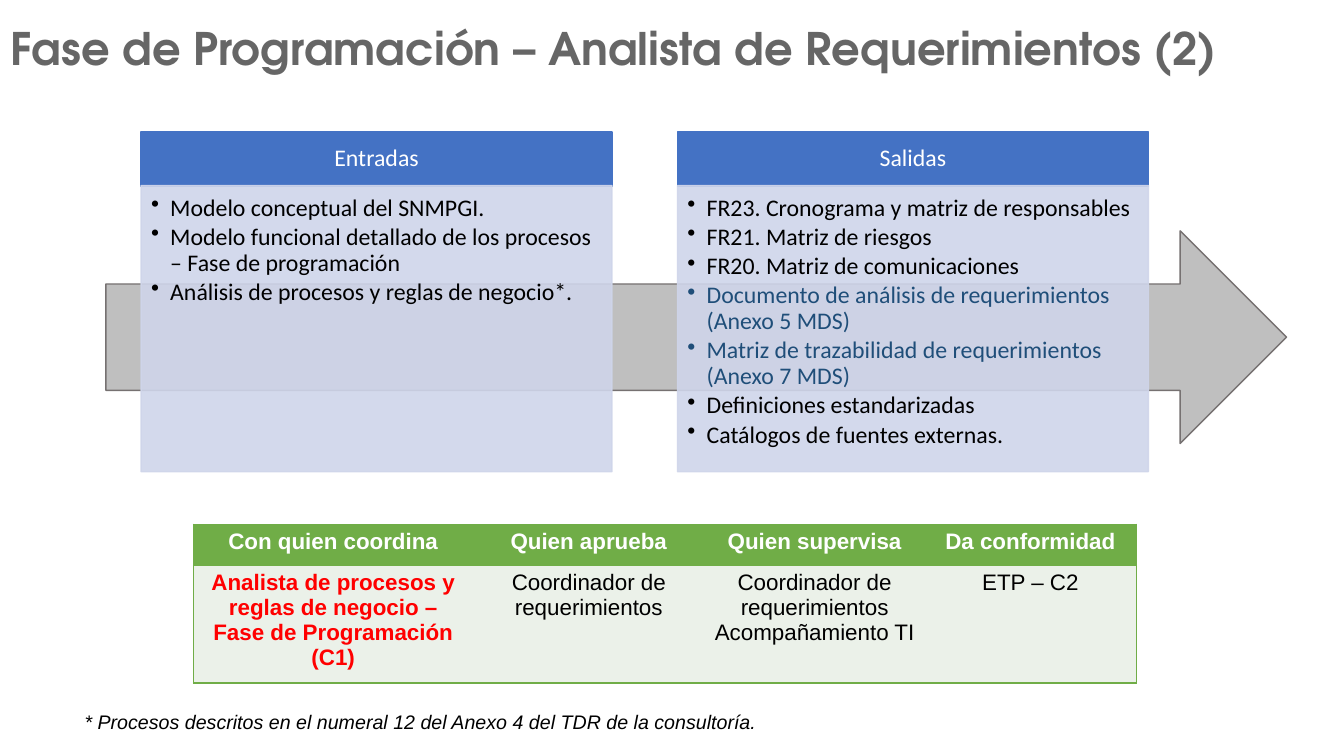
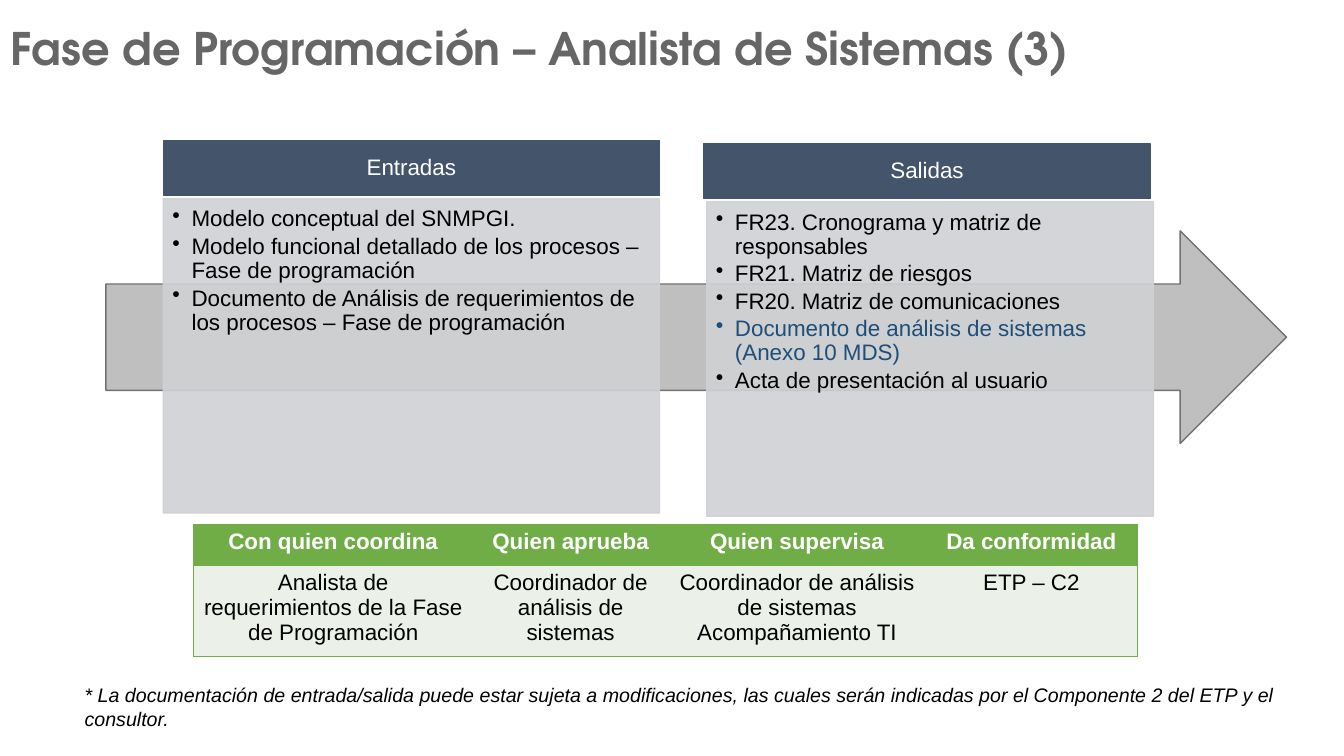
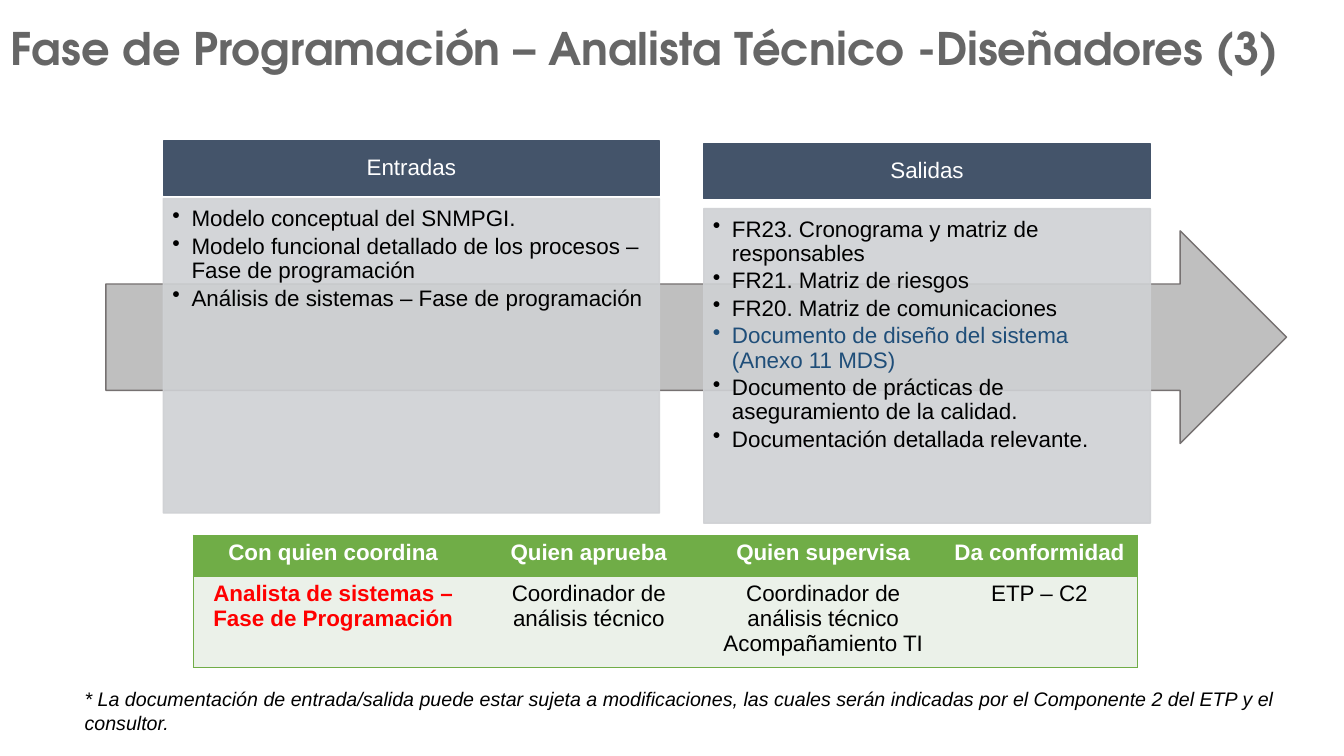
"""Build three slides on the inputs, outputs and roles of the programming phase."""
from dataclasses import dataclass

from lxml.etree import SubElement
from pptx import Presentation
from pptx.dml.color import RGBColor
from pptx.enum.shapes import MSO_SHAPE as Preset
from pptx.enum.text import MSO_ANCHOR as Anchor, PP_ALIGN as Align
from pptx.oxml.ns import qn
from pptx.util import Emu, Pt

EMU_PER_PX = 9144


@dataclass(frozen=True)
class Theme:
    title_font: str = "TeX Gyre Adventor"
    text_font: str = "Arial"
    title_size: int = 32
    table_size: int = 16
    note_size: int = 14
    title: str = "666666"
    text: str = "000000"
    inverse: str = "FFFFFF"
    annex: str = "1F4E79"
    alert: str = "FF0000"
    arrow: str = "BFBFBF"
    arrow_line: str = "767171"
    table_head: str = "70AD47"
    table_body: str = "EBF1E9"


@dataclass(frozen=True)
class PanelStyle:
    font: str
    size: int
    head: str
    body: str
    head_insets: tuple
    body_insets: tuple


THEME = Theme()
BLUE = PanelStyle("Calibri", 17, "4472C4", "CFD5EA", (13, 8, 13, 8), (10, 10, 13, 15))
SLATE = PanelStyle("Arial", 16, "44546A", "CFD1D4", (12, 7, 12, 7), (9, 9, 12, 14))

SLIDE_SIZE = (1333, 750)
ARROW_BOX = (105, 229, 1171, 211)
TITLE_BOX = (1, -4, 1332, 102)
PANEL_HEAD_HEIGHT = 54
TABLE_LEFT = 192
TABLE_HEAD_HEIGHT = 41
NOTE_LEFT = 74
BULLET_INDENT = 19
ANNEX_MARK = "(Anexo"

TABLE_HEADINGS = ("Con quien coordina", "Quien aprueba", "Quien supervisa", "Da conformidad")
CONFORMITY = "ETP – C2"
SUPPORT = "Acompañamiento TI"
COMMON_INPUTS = (
    "Modelo conceptual del SNMPGI.",
    "Modelo funcional detallado de los procesos – Fase de programación",
)
COMMON_OUTPUTS = (
    "FR23. Cronograma y matriz de responsables",
    "FR21. Matriz de riesgos",
    "FR20. Matriz de comunicaciones",
)
CHANGE_NOTE = (
    "* La documentación de entrada/salida puede estar sujeta a modificaciones, las cuales "
    "serán indicadas por el Componente 2 del ETP y el consultor."
)

SLIDES = (
    {
        "title": "Fase de Programación – Analista de Requerimientos (2)",
        "style": BLUE,
        "inputs": ("Análisis de procesos y reglas de negocio*.",),
        "outputs": (
            "Documento de análisis de requerimientos (Anexo 5 MDS)",
            "Matriz de trazabilidad de requerimientos (Anexo 7 MDS)",
            "Definiciones estandarizadas",
            "Catálogos de fuentes externas.",
        ),
        "input_panel": {"head": (140, 131), "body": (140, 184), "size": (467, 284)},
        "output_panel": {"head": (672, 131), "body": (672, 184), "size": (467, 284)},
        "coordinates": "Analista de procesos y reglas de negocio – Fase de Programación (C1)",
        "alert": True,
        "approver": "Coordinador de requerimientos",
        "table": {"top": 520, "columns": (277, 230, 218, 210), "detail_height": 109},
        "note": "* Procesos descritos en el numeral 12 del Anexo 4 del TDR de la consultoría.",
        "note_box": (699, 884, 34),
    },
    {
        "title": "Fase de Programación – Analista de Sistemas (3)",
        "style": SLATE,
        "inputs": (
            "Documento de Análisis de requerimientos de los procesos – Fase de programación",
        ),
        "outputs": (
            "Documento de análisis de sistemas (Anexo 10 MDS)",
            "Acta de presentación al usuario",
        ),
        "input_panel": {"head": (162, 140), "body": (162, 197), "size": (492, 312)},
        "output_panel": {"head": (698, 143), "body": (701, 200), "size": (443, 312)},
        "coordinates": "Analista de requerimientos de la Fase de Programación",
        "alert": False,
        "approver": "Coordinador de análisis de sistemas",
        "table": {"top": 520, "columns": (277, 194, 255, 210), "detail_height": 84},
        "note": CHANGE_NOTE,
        "note_box": (673, 1202, 57),
    },
    {
        "title": "Fase de Programación – Analista Técnico -Diseñadores (3)",
        "style": SLATE,
        "inputs": ("Análisis de sistemas – Fase de programación",),
        "outputs": (
            "Documento de diseño del sistema (Anexo 11 MDS)",
            "Documento de prácticas de aseguramiento de la calidad.",
            "Documentación detallada relevante.",
        ),
        "input_panel": {"head": (162, 140), "body": (162, 197), "size": (492, 312)},
        "output_panel": {"head": (698, 143), "body": (698, 207), "size": (443, 312)},
        "coordinates": "Analista de sistemas – Fase de Programación",
        "alert": True,
        "approver": "Coordinador de análisis técnico",
        "table": {"top": 531, "columns": (277, 230, 235, 194), "detail_height": 84},
        "note": CHANGE_NOTE,
        "note_box": (677, 1202, 57),
    },
)


def px(value):
    return Emu(round(value * EMU_PER_PX))


def rgb(value):
    return RGBColor.from_string(value)


def format_runs(paragraph, font, size, color, bold=False, italic=False):
    for run in paragraph.runs:
        run.font.name = font
        run.font.size = Pt(size)
        run.font.color.rgb = rgb(color)
        run.font.bold = bold
        run.font.italic = italic


def set_insets(text_frame, insets):
    left, top, right, bottom = map(px, insets)
    text_frame.margin_left, text_frame.margin_top = left, top
    text_frame.margin_right, text_frame.margin_bottom = right, bottom


def add_block(slide, preset, box, fill, line, opacity=100):
    shape = slide.shapes.add_shape(preset, *map(px, box))
    shape.shadow.inherit = False
    shape.fill.solid()
    shape.fill.fore_color.rgb = rgb(fill)
    shape.line.color.rgb = rgb(line)
    shape.line.width = Pt(1)
    if opacity < 100:
        for color in shape.element.spPr.iter(qn("a:srgbClr")):
            SubElement(color, qn("a:alpha"), val=str(opacity * 1000))
    return shape


def add_text(slide, box, text, anchor=Anchor.TOP):
    text_frame = slide.shapes.add_textbox(*map(px, box)).text_frame
    text_frame.word_wrap = True
    text_frame.vertical_anchor = anchor
    text_frame.text = text
    return text_frame


def add_bullet(paragraph):
    properties = paragraph._p.get_or_add_pPr()
    properties.set("marL", str(px(BULLET_INDENT)))
    properties.set("indent", str(px(-BULLET_INDENT)))
    SubElement(properties, qn("a:buChar"), char="•")


def add_panel(slide, heading, items, place, style):
    width, height = place["size"]
    head = add_block(slide, Preset.RECTANGLE, (*place["head"], width, PANEL_HEAD_HEIGHT),
                     style.head, style.head)
    text_frame = head.text_frame
    set_insets(text_frame, style.head_insets)
    text_frame.vertical_anchor = Anchor.MIDDLE
    text_frame.text = heading
    paragraph = text_frame.paragraphs[0]
    paragraph.alignment = Align.CENTER
    paragraph.line_spacing = 0.9
    format_runs(paragraph, style.font, style.size, THEME.inverse)

    body = add_block(slide, Preset.RECTANGLE, (*place["body"], width, height),
                     style.body, style.body, opacity=90)
    text_frame = body.text_frame
    set_insets(text_frame, style.body_insets)
    text_frame.vertical_anchor = Anchor.TOP
    text_frame.text = "\n".join(items)
    for paragraph in text_frame.paragraphs:
        add_bullet(paragraph)
        paragraph.alignment = Align.LEFT
        paragraph.line_spacing = 0.9
        paragraph.space_after = Pt(style.size * 0.15)
        color = THEME.annex if ANNEX_MARK in paragraph.text else THEME.text
        format_runs(paragraph, style.font, style.size, color)


def set_borders(cell, visible):
    properties = cell._tc.get_or_add_tcPr()
    for side in "LRTB":
        line = SubElement(properties, qn(f"a:ln{side}"), w=str(Pt(1)))
        if side in visible:
            fill = SubElement(line, qn("a:solidFill"))
            SubElement(fill, qn("a:srgbClr"), val=THEME.table_head)
        else:
            SubElement(line, qn("a:noFill"))


def add_roles_table(slide, content):
    place = content["table"]
    columns = place["columns"]
    heights = (TABLE_HEAD_HEIGHT, place["detail_height"])
    approver = content["approver"]
    details = (content["coordinates"], approver, f"{approver}\n{SUPPORT}", CONFORMITY)
    rows = (TABLE_HEADINGS, details)
    box = (TABLE_LEFT, place["top"], sum(columns), sum(heights))
    table = slide.shapes.add_table(len(rows), len(columns), *map(px, box)).table
    for column, width in zip(table.columns, columns):
        column.width = px(width)
    for row_index, (texts, height) in enumerate(zip(rows, heights)):
        table.rows[row_index].height = px(height)
        is_head = row_index == 0
        for column_index, text in enumerate(texts):
            cell = table.cell(row_index, column_index)
            is_first, is_last = column_index == 0, column_index == len(columns) - 1
            set_borders(cell, "TB" + "L" * is_first + "R" * is_last)
            cell.fill.solid()
            cell.fill.fore_color.rgb = rgb(THEME.table_head if is_head else THEME.table_body)
            is_alert = not is_head and is_first and content["alert"]
            color = THEME.inverse if is_head else THEME.alert if is_alert else THEME.text
            cell.text_frame.text = text
            for paragraph in cell.text_frame.paragraphs:
                paragraph.alignment = Align.CENTER
                format_runs(paragraph, THEME.text_font, THEME.table_size, color,
                            bold=is_head or is_alert)


def add_phase_slide(presentation, content):
    slide = presentation.slides.add_slide(presentation.slide_layouts[6])
    add_block(slide, Preset.RIGHT_ARROW, ARROW_BOX, THEME.arrow, THEME.arrow_line)
    title = add_text(slide, TITLE_BOX, content["title"], Anchor.MIDDLE)
    set_insets(title, (10, 10, 10, 10))
    format_runs(title.paragraphs[0], THEME.title_font, THEME.title_size, THEME.title, bold=True)

    style = content["style"]
    add_panel(slide, "Entradas", COMMON_INPUTS + content["inputs"], content["input_panel"], style)
    add_panel(slide, "Salidas", COMMON_OUTPUTS + content["outputs"], content["output_panel"], style)
    add_roles_table(slide, content)

    note = add_text(slide, (NOTE_LEFT, *content["note_box"]), content["note"])
    format_runs(note.paragraphs[0], THEME.text_font, THEME.note_size, THEME.text, italic=True)


def main():
    presentation = Presentation()
    presentation.slide_width, presentation.slide_height = map(px, SLIDE_SIZE)
    for content in SLIDES:
        add_phase_slide(presentation, content)
    presentation.save("out.pptx")


if __name__ == "__main__":
    main()
